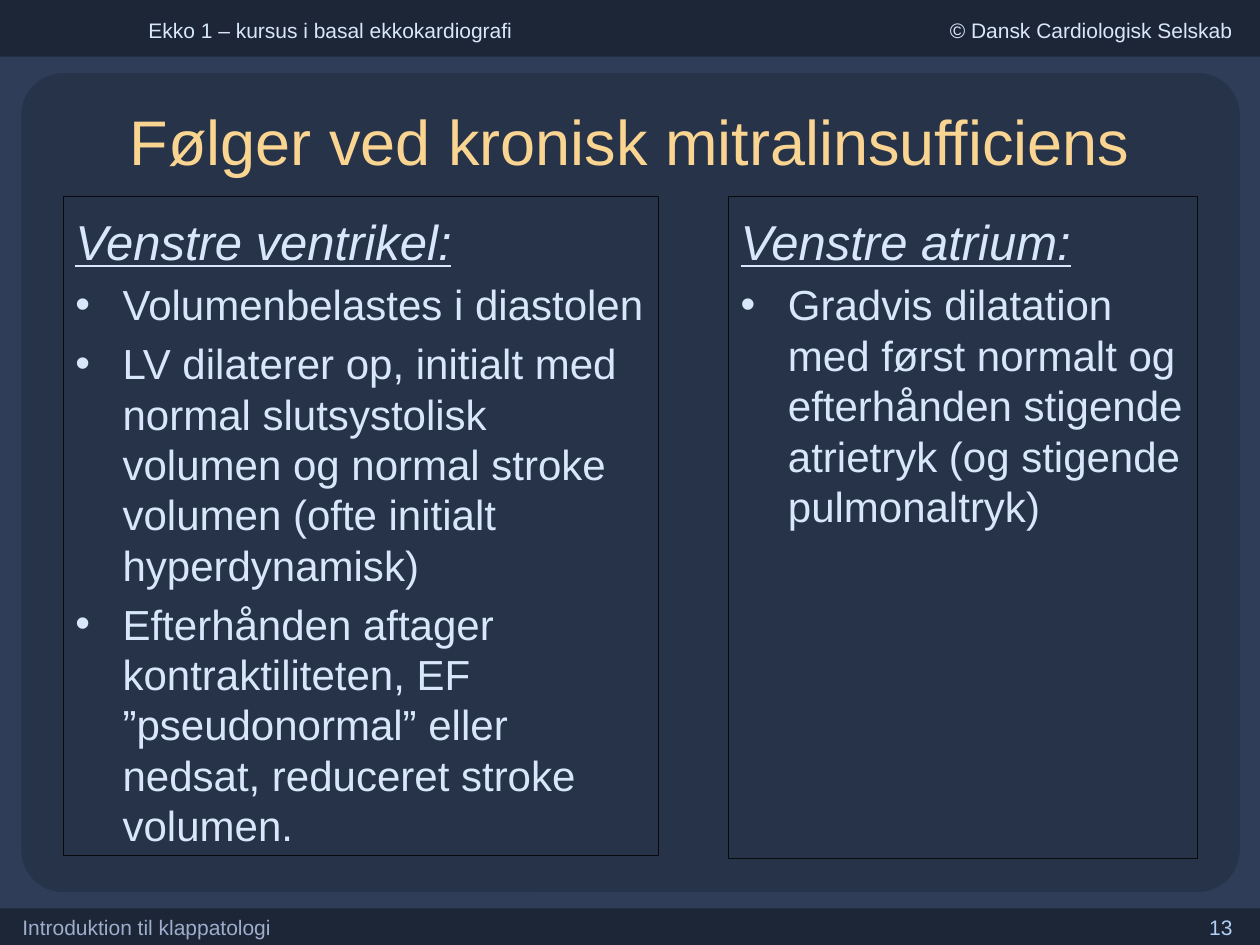
from lxml import etree
from pptx import Presentation
from pptx.dml.color import RGBColor
from pptx.enum.shapes import MSO_SHAPE
from pptx.enum.text import MSO_ANCHOR, PP_ALIGN
from pptx.oxml.ns import qn
from pptx.util import Inches, Pt

RECTANGLE, ROUNDED = MSO_SHAPE.RECTANGLE, MSO_SHAPE.ROUNDED_RECTANGLE
LEFT, CENTER, RIGHT = PP_ALIGN.LEFT, PP_ALIGN.CENTER, PP_ALIGN.RIGHT
TOP, MIDDLE = MSO_ANCHOR.TOP, MSO_ANCHOR.MIDDLE

FONT = "Arial"
BACKGROUND, BAR, PANEL, BORDER = "2F3D58", "1D2637", "273349", "080A0E"
TEXT, TITLE, FOOTER, NUMBER = "D8E8FA", "FAD491", "9DADCB", "AFD0F5"
WIDTH, HEIGHT = 10, 7.5
INDENT = 0.375


def color(value):
    return RGBColor.from_string(value)


def format_font(font, size, value):
    font.name = FONT
    font.size = Pt(size)
    font.color.rgb = color(value)


def add_panel(slide, box, fill, kind=RECTANGLE):
    shape = slide.shapes.add_shape(kind, *map(Inches, box))
    shape.shadow.inherit = False
    shape.fill.solid()
    shape.fill.fore_color.rgb = color(fill)
    shape.line.fill.background()
    return shape


def add_label(slide, box, text, size, value, align=LEFT, anchor=TOP):
    text_frame = slide.shapes.add_textbox(*map(Inches, box)).text_frame
    text_frame.word_wrap = True
    text_frame.vertical_anchor = anchor
    text_frame.text = text
    paragraph = text_frame.paragraphs[0]
    paragraph.alignment = align
    format_font(paragraph.runs[0].font, size, value)


def add_bullet(paragraph):
    properties = paragraph._p.get_or_add_pPr()
    properties.set("marL", str(Inches(INDENT)))
    properties.set("indent", str(-Inches(INDENT)))
    etree.SubElement(properties, qn("a:buFont"), typeface=FONT)
    etree.SubElement(properties, qn("a:buChar"), char="•")


def add_column(slide, box, heading, points):
    """Outlined box with an underlined heading above bullet points."""
    shape = slide.shapes.add_textbox(*map(Inches, box))
    shape.line.color.rgb = color(BORDER)
    shape.line.width = Pt(0.5)
    text_frame = shape.text_frame
    text_frame.word_wrap = True
    text_frame.margin_top = Inches(0.12)
    text_frame.text = heading
    font = text_frame.paragraphs[0].runs[0].font
    format_font(font, 28, TEXT)
    font.italic = font.underline = True
    for point in points:
        paragraph = text_frame.add_paragraph()
        paragraph.text = point
        add_bullet(paragraph)
        paragraph.space_before = Pt(4.8)
        format_font(paragraph.runs[0].font, 24, TEXT)


def add_header(slide, box):
    left, top, width, height = box
    add_panel(slide, box, BAR)
    add_label(slide, (left + 1.08, top + 0.09, 3.75, 0.3),
              "Ekko 1 – kursus i basal ekkokardiografi", 12, TEXT)
    add_label(slide, (left + width - 3.11, top + 0.09, 2.99, 0.3),
              "© Dansk Cardiologisk Selskab", 12, TEXT, RIGHT)


def add_footer(slide, box):
    left, top, width, height = box
    add_panel(slide, box, BAR)
    add_label(slide, (left + 0.08, top, 3.17, 0.25),
              "Introduktion til klappatologi", 12, FOOTER)
    add_label(slide, (left + width - 2.45, top, 2.33, 0.25),
              "13", 12, NUMBER, RIGHT)


def add_content(slide, box):
    left, top, width, height = box
    panel = add_panel(slide, box, PANEL, ROUNDED)
    panel.adjustments[0] = 0.051
    inner_left, inner_width = left + 0.33, width - 0.67
    add_label(slide, (inner_left, top + 0.09, inner_width, 0.88),
              "Følger ved kronisk mitralinsufficiens", 36, TITLE, CENTER, MIDDLE)
    column_top = top + 0.98
    add_column(slide, (inner_left, column_top, 4.73, 5.23), "Venstre ventrikel:", [
        "Volumenbelastes i diastolen",
        "LV dilaterer op, initialt med normal slutsystolisk volumen og normal "
        "stroke volumen (ofte initialt hyperdynamisk)",
        "Efterhånden aftager kontraktiliteten, EF ”pseudonormal” eller nedsat, "
        "reduceret stroke volumen.",
    ])
    add_column(slide, (inner_left + inner_width - 3.72, column_top, 3.72, 5.25),
               "Venstre atrium:", [
        "Gradvis dilatation med først normalt og efterhånden stigende atrietryk "
        "(og stigende pulmonaltryk)",
    ])


def main():
    presentation = Presentation()
    presentation.slide_width = Inches(WIDTH)
    presentation.slide_height = Inches(HEIGHT)
    slide = presentation.slides.add_slide(presentation.slide_layouts[6])
    slide.background.fill.solid()
    slide.background.fill.fore_color.rgb = color(BACKGROUND)

    # Bars at the bottom and top
    add_footer(slide, (0, HEIGHT - 0.29, WIDTH, 0.29))
    add_header(slide, (0, 0, WIDTH, 0.45))

    # Title and two columns on the rounded panel
    add_content(slide, (0.17, 0.58, 9.67, 6.5))

    presentation.save("out.pptx")


if __name__ == "__main__":
    main()
